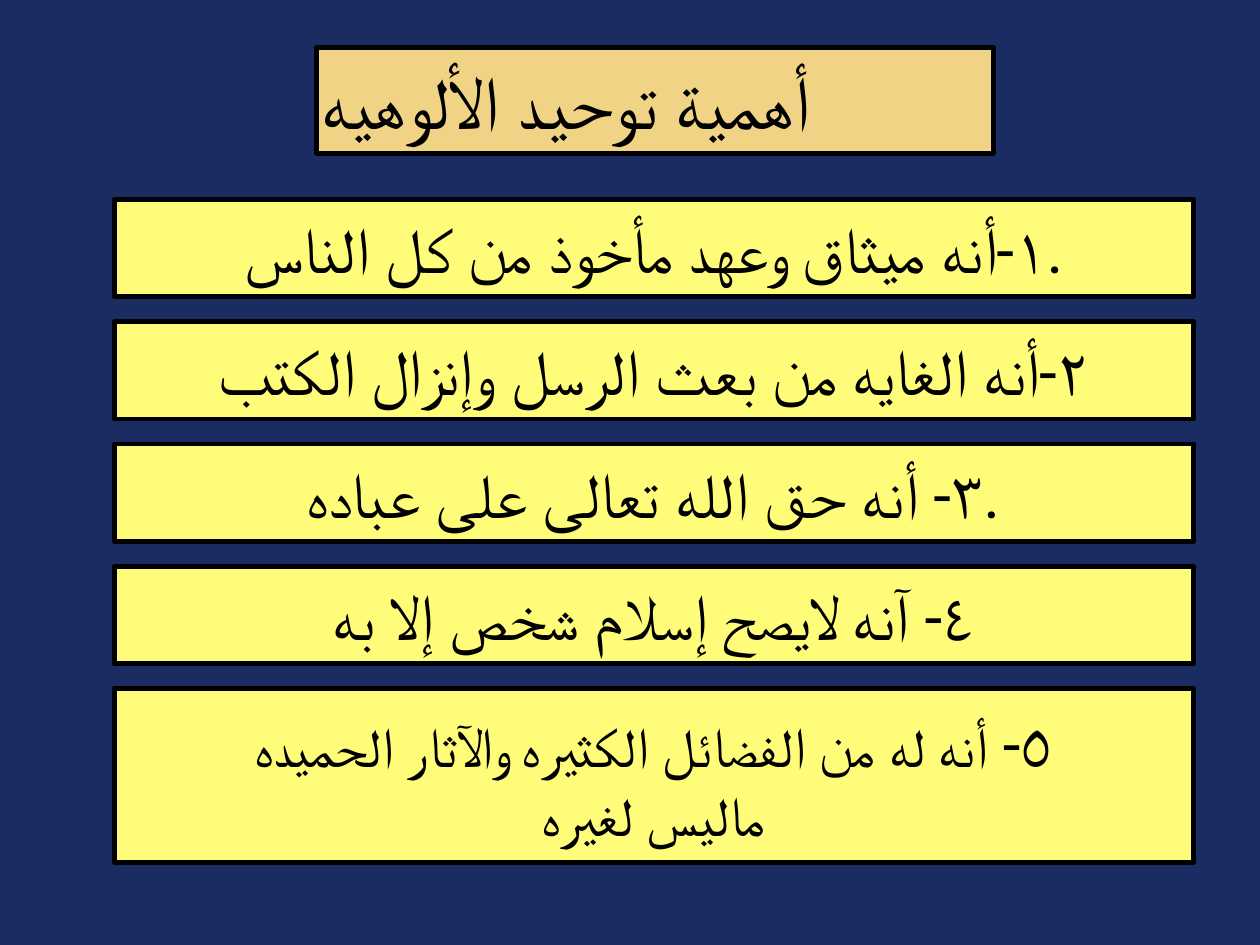
import pptx
import pptx.dml.color
import pptx.enum.shapes
import pptx.enum.text
import pptx.oxml.ns
import pptx.util
from lxml import etree

COLOURS = {"navy": "1A2C62", "sand": "F0D384", "yellow": "FFFC79", "black": "000000"}
ALIGN = pptx.enum.text.PP_ALIGN


def colour(name):
    return pptx.dml.color.RGBColor.from_string(COLOURS[name])


class Slide:
    """Places elements by percentages of the slide's size."""

    font = "Roboto"
    border = pptx.util.Pt(4)
    inset = pptx.util.Inches(0.06)

    def __init__(self, deck, background):
        self.width, self.height = deck.slide_width, deck.slide_height
        self.page = deck.slides.add_slide(deck.slide_layouts[6])
        self.page.background.fill.solid()
        self.page.background.fill.fore_color.rgb = colour(background)

    def panel(self, left, top, width, height, fill):
        box = self.page.shapes.add_shape(
            pptx.enum.shapes.MSO_SHAPE.RECTANGLE,
            round(self.width * left / 100), round(self.height * top / 100),
            round(self.width * width / 100), round(self.height * height / 100))
        box.shadow.inherit = False
        box.fill.solid()
        box.fill.fore_color.rgb = colour(fill)
        box.line.color.rgb = colour("black")
        box.line.width = self.border
        frame = box.text_frame
        frame.word_wrap = True
        frame.vertical_anchor = pptx.enum.text.MSO_ANCHOR.MIDDLE
        frame.margin_left = frame.margin_right = self.inset
        frame.margin_top = frame.margin_bottom = self.inset
        return frame

    def text(self, para, words, size, align=ALIGN.CENTER):
        para.alignment = align
        para.font.name = self.font
        para.font.size = pptx.util.Pt(size)
        para.font.color.rgb = colour("black")
        # Arabic letters take the complex-script font
        qn = pptx.oxml.ns.qn
        defaults = para._p.get_or_add_pPr().find(qn("a:defRPr"))
        etree.SubElement(defaults, qn("a:cs")).set("typeface", self.font)
        for part, part_size in words:
            span = para.add_run()
            span.text = part
            if part_size:
                span.font.size = pptx.util.Pt(part_size)


REASONS = [
    "١-أنه ميثاق وعهد مأخوذ من كل الناس.",
    "٢-أنه الغايه من بعث الرسل وإنزال الكتب",
    "٣- أنه حق الله تعالى على عباده.",
    "٤- آنه لايصح إسلام شخص إلا به",
]
LEFT, WIDTH = 9.07, 85.65
TOP, PITCH, ROW = 21.09, 12.95, 10.31


def main():
    deck = pptx.Presentation()
    deck.slide_width = pptx.util.Inches(14.22)
    deck.slide_height = pptx.util.Inches(10.67)
    slide = Slide(deck, "navy")

    # Title
    title = slide.panel(25.11, 5.06, 53.73, 11.15, "sand")
    slide.text(title.paragraphs[0], [("أهمية توحيد الألوهيه", None)], 60, ALIGN.LEFT)

    # One-line reasons
    for index, reason in enumerate(REASONS):
        frame = slide.panel(LEFT, TOP + index * PITCH, WIDTH, ROW, "yellow")
        slide.text(frame.paragraphs[0], [(reason, None)], 52)

    # Two-line closing reason
    frame = slide.panel(LEFT, TOP + len(REASONS) * PITCH, WIDTH, 18.37, "yellow")
    slide.text(frame.paragraphs[0],
               [("٥- ", 52), ("أنه له من الفضائل الكثيره والآثار الحميده", None)], 45)
    slide.text(frame.add_paragraph(), [("ماليس لغيره", None)], 45)

    deck.save("out.pptx")


if __name__ == "__main__":
    main()
